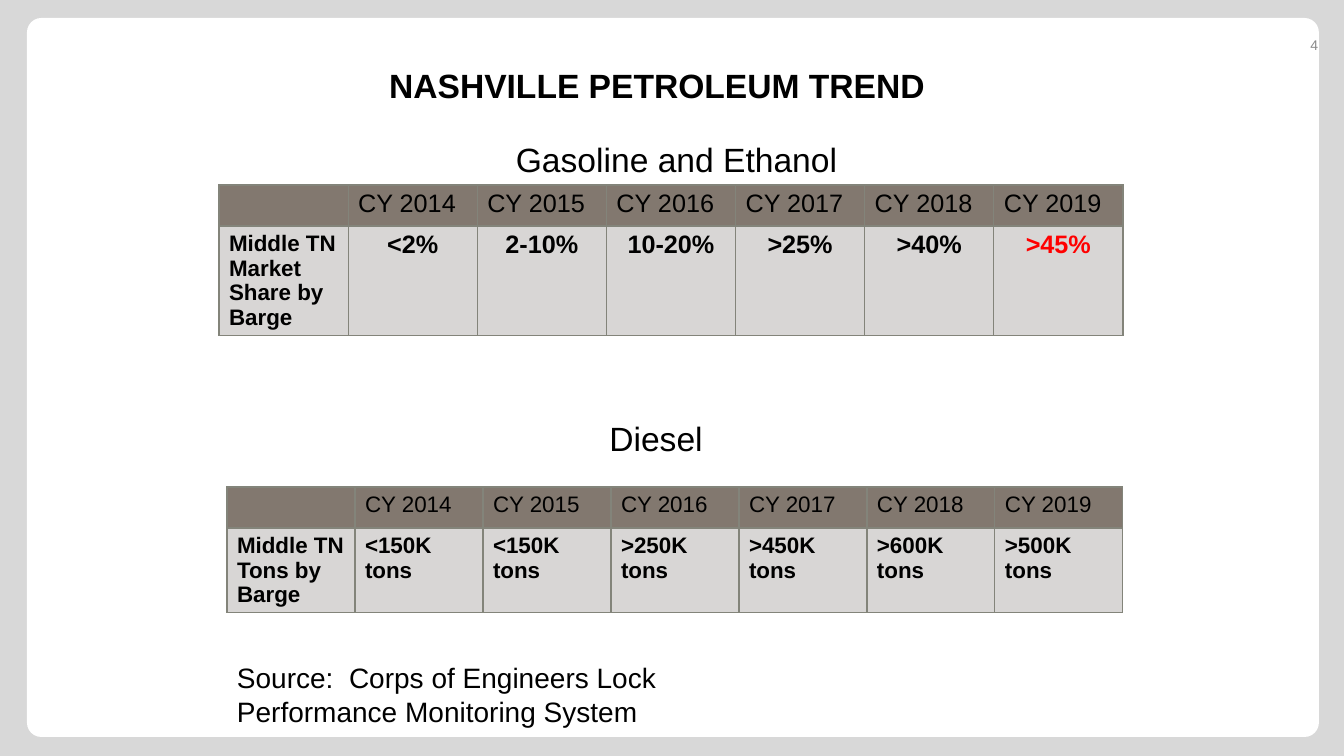
from lxml import etree
from pptx import Presentation
from pptx import util as u
from pptx.dml.color import RGBColor
from pptx.enum import shapes, text
from pptx.oxml import ns

SCALE = 914400 / 100.8
LEFT, CENTER, RIGHT = text.PP_ALIGN.LEFT, text.PP_ALIGN.CENTER, text.PP_ALIGN.RIGHT
YEARS = [""] + [f"CY {year}" for year in range(2014, 2020)]
EDGES = ("a:lnL", "a:lnR", "a:lnT", "a:lnB")


def color(code):
    return RGBColor.from_string(code)


def write(frame, words, size, align=LEFT, bold=False, ink="000000"):
    frame.word_wrap = True
    line = frame.paragraphs[0]
    line.alignment = align
    font = (line.add_run() if words else line).font
    if words:
        line.runs[0].text = words
    for name, value in {"name": "Arial", "size": u.Pt(size), "bold": bold}.items():
        setattr(font, name, value)
    font.color.rgb = color(ink)


deck = Presentation()
deck.slide_width, deck.slide_height = [round(n * SCALE) for n in (1344, 756)]
slide = deck.slides.add_slide(deck.slide_layouts[5])
slide.background.fill.solid()
slide.background.fill.fore_color.rgb = color("D8D8D8")

panel = slide.shapes.add_shape(
    shapes.MSO_SHAPE.ROUNDED_RECTANGLE, *[round(n * SCALE) for n in (27, 18, 1292, 719)])
panel.adjustments[0] = 0.02
panel.shadow.inherit = False
panel.fill.solid()
panel.fill.fore_color.rgb = color("FFFFFF")
panel.line.fill.background()
slide.shapes._spTree.insert(2, panel._element)

heading = slide.shapes.title
places = {"left": 219, "top": 46, "width": 876, "height": 79}
for name, value in places.items():
    setattr(heading, name, round(value * SCALE))
heading.text_frame.vertical_anchor = text.MSO_ANCHOR.MIDDLE
write(heading.text_frame, "NASHVILLE PETROLEUM TREND", 24, CENTER, True)

tables = [
    ((219, 185, 904, 150), 18, CENTER, 18, "FF0000",
     ["Middle TN Market Share by Barge", "<2%", "2-10%", "10-20%", ">25%", ">40%", ">45%"]),
    ((227, 487, 896, 125), 16, LEFT, 16, "000000",
     ["Middle TN Tons by Barge"] + [f"{tons}K tons" for tons in
                                    ("<150", "<150", ">250", ">450", ">600", ">500")]),
]
for box, year_size, align, share_size, last_ink, shares in tables:
    grid = slide.shapes.add_table(2, 7, *[round(n * SCALE) for n in box]).table
    for column in grid.columns:
        column.width = round(box[2] / 7 * SCALE)
    for row, height in zip(grid.rows, (41, box[3] - 41)):
        row.height = round(height * SCALE)
    for r, (values, fill) in enumerate([(YEARS, "82786F"), (shares, "D8D6D5")]):
        for c, value in enumerate(values):
            cell = grid.cell(r, c)
            if r == 0:
                write(cell.text_frame, value, year_size)
            elif c == 0:
                write(cell.text_frame, value, 16, bold=True)
            else:
                write(cell.text_frame, value, share_size, align, True,
                      last_ink if c == 6 else "000000")
            props = cell._tc.get_or_add_tcPr()
            for edge in EDGES:
                border = etree.SubElement(props, ns.qn(edge), w=str(u.Pt(1)))
                paint = etree.SubElement(border, ns.qn("a:solidFill"))
                etree.SubElement(paint, ns.qn("a:srgbClr"), val="83847A")
            cell.fill.solid()
            cell.fill.fore_color.rgb = color(fill)

captions = [
    ("4", (1221, 25, 107, 40), 10, RIGHT, "898989", text.MSO_ANCHOR.MIDDLE),
    ("Gasoline and Ethanol", (506, 134, 494, 50), 24, LEFT, "000000", text.MSO_ANCHOR.TOP),
    ("Diesel", (409, 413, 494, 50), 24, CENTER, "000000", text.MSO_ANCHOR.TOP),
    ("Source:  Corps of Engineers Lock Performance Monitoring System",
     (227, 656, 578, 78), 20, LEFT, "000000", text.MSO_ANCHOR.TOP),
]
for words, box, size, align, ink, anchor in captions:
    caption = slide.shapes.add_textbox(*[round(n * SCALE) for n in box])
    caption.text_frame.vertical_anchor = anchor
    write(caption.text_frame, words, size, align, ink=ink)

deck.save("out.pptx")
